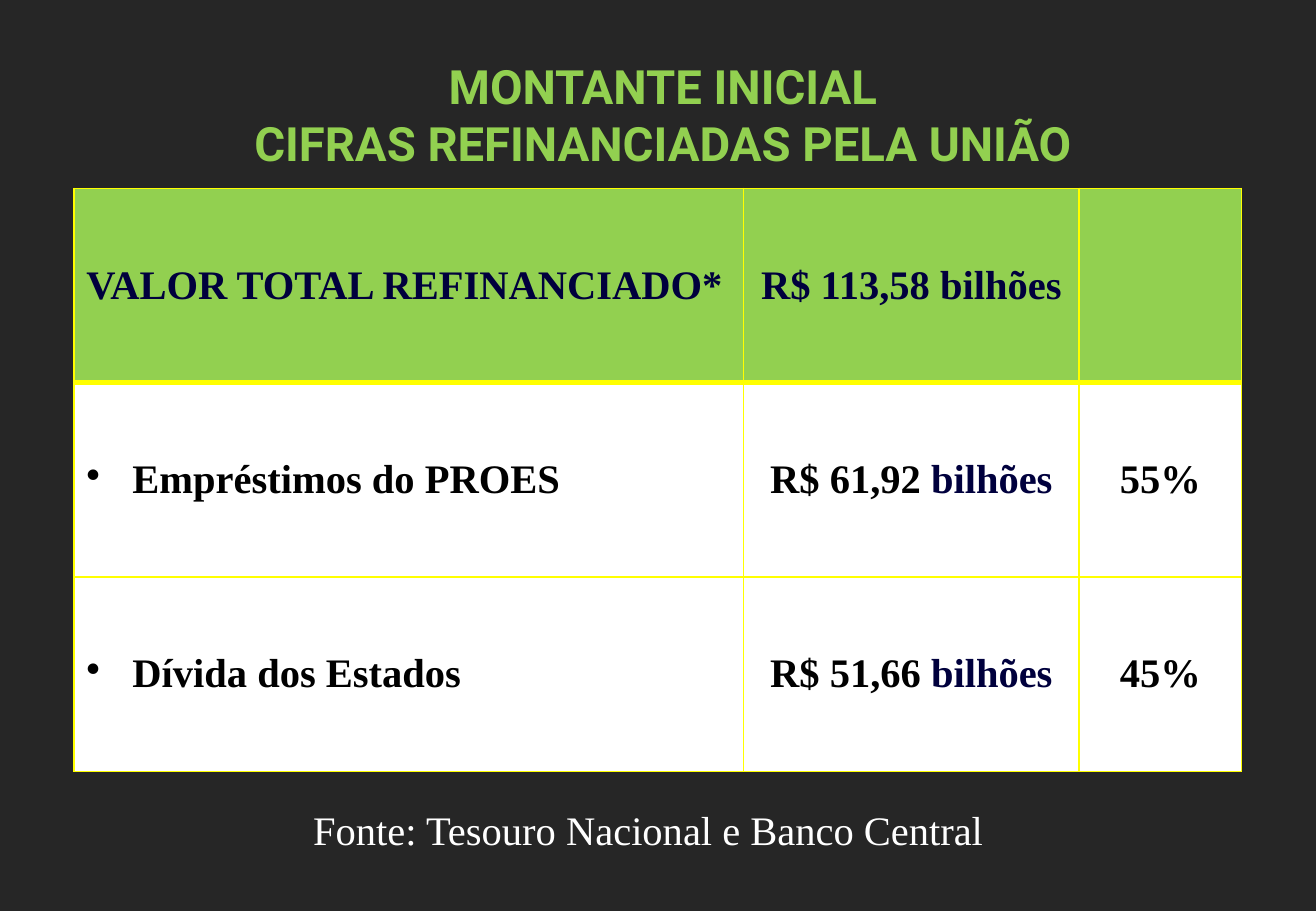
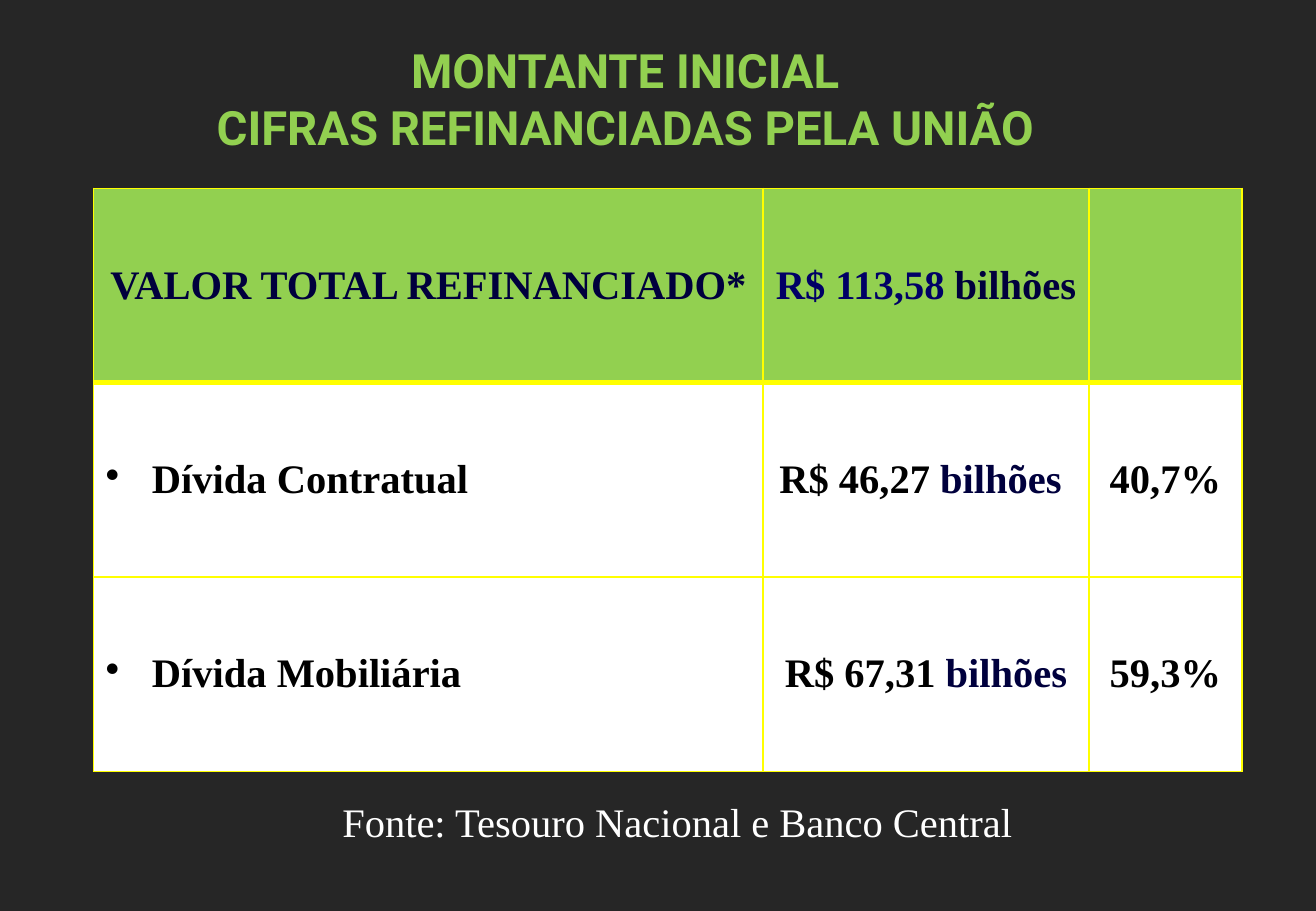
from dataclasses import dataclass

from lxml import etree
from pptx import Presentation
from pptx.dml.color import RGBColor
from pptx.enum.text import MSO_ANCHOR, MSO_AUTO_SIZE, PP_ALIGN
from pptx.oxml.ns import qn
from pptx.util import Inches, Pt

LEFT, CENTER = PP_ALIGN.LEFT, PP_ALIGN.CENTER
TOP, MIDDLE = MSO_ANCHOR.TOP, MSO_ANCHOR.MIDDLE
NO_AUTOSIZE = MSO_AUTO_SIZE.NONE
SLIDE_W, SLIDE_H = Inches(10.83), Inches(7.5)
TITLE_ONLY = 5
COLORS = {
    "background": "262626",
    "green": "92D050",
    "yellow": "FFFF00",
    "navy": "00003D",
    "blue": "000066",
    "black": "000000",
    "white": "FFFFFF",
}
HEAD_FONT, BODY_FONT = "Roboto", "Times New Roman"
TITLE = ("MONTANTE INICIAL", "CIFRAS REFINANCIADAS PELA UNIÃO")
SOURCE = "Fonte: Tesouro Nacional e Banco Central"
TABLE_TOP, TABLE_HEIGHT = 20.67, 64
THIN, THICK = 1, 3
PAD, TIGHT = 0.1, 0.01
INDENT = 0.38

Run = tuple[str, str]


@dataclass(frozen=True)
class Box:
    """Shares of the slide's width and height, in percent."""
    x: float
    y: float
    w: float
    h: float

    def lengths(self) -> tuple[int, int, int, int]:
        return across(self.x), down(self.y), across(self.w), down(self.h)


@dataclass(frozen=True)
class Cell:
    runs: tuple[Run, ...] = ()
    align: PP_ALIGN = CENTER
    bullet: bool = False
    left: float = PAD
    right: float = PAD


@dataclass(frozen=True)
class DebtSlide:
    title: Box
    source: Box
    table_left: float
    columns: tuple[float, ...]
    rows: tuple[tuple[Cell, ...], ...]


def across(share: float) -> int:
    return round(SLIDE_W * share / 100)


def down(share: float) -> int:
    return round(SLIDE_H * share / 100)


def rgb(name: str) -> RGBColor:
    return RGBColor.from_string(COLORS[name])


def write_text(tf, lines, *, font: str, size: float, bold: bool = False,
               align: PP_ALIGN = CENTER, bullet: bool = False) -> None:
    for i, runs in enumerate(lines):
        p = tf.paragraphs[0] if i == 0 else tf.add_paragraph()
        p.alignment = align
        if bullet:
            pPr = p._p.get_or_add_pPr()
            pPr.set("marL", str(Inches(INDENT)))
            pPr.set("indent", str(-Inches(INDENT)))
            etree.SubElement(pPr, qn("a:buChar")).set("char", "•")
        for text, color in runs:
            r = p.add_run()
            r.text = text
            r.font.name, r.font.size, r.font.bold = font, Pt(size), bold
            r.font.color.rgb = rgb(color)


def place_text(sp, box: Box, lines, **style) -> None:
    sp.left, sp.top, sp.width, sp.height = box.lengths()
    tf = sp.text_frame
    tf.word_wrap, tf.auto_size, tf.vertical_anchor = True, NO_AUTOSIZE, TOP
    write_text(tf, lines, **style)


def set_border(tcPr, side: str, width: float) -> None:
    ln = etree.SubElement(tcPr, qn(f"a:ln{side}"), w=str(Pt(width)))
    fill = etree.SubElement(ln, qn("a:solidFill"))
    etree.SubElement(fill, qn("a:srgbClr"), val=COLORS["yellow"])


def format_cell(target, cell: Cell, row: int) -> None:
    tcPr = target._tc.get_or_add_tcPr()
    widths = {"L": THIN, "R": THIN,
              "T": THICK if row == 1 else THIN,
              "B": THICK if row == 0 else THIN}
    for side, width in widths.items():
        set_border(tcPr, side, width)
    target.fill.solid()
    target.fill.fore_color.rgb = rgb("white" if row else "green")
    target.vertical_anchor = MIDDLE
    target.margin_left, target.margin_right = Inches(cell.left), Inches(cell.right)
    write_text(target.text_frame, [cell.runs], font=BODY_FONT, size=24,
               bold=True, align=cell.align, bullet=cell.bullet)


def add_debt_table(s, data: DebtSlide) -> None:
    box = Box(data.table_left, TABLE_TOP, sum(data.columns), TABLE_HEIGHT)
    table = s.shapes.add_table(len(data.rows), len(data.columns), *box.lengths()).table
    table.first_row = table.horz_banding = False
    for column, share in zip(table.columns, data.columns):
        column.width = across(share)
    for i, cells in enumerate(data.rows):
        table.rows[i].height = down(TABLE_HEIGHT / len(data.rows))
        for j, cell in enumerate(cells):
            format_cell(table.cell(i, j), cell, i)


def add_debt_slide(prs, data: DebtSlide) -> None:
    s = prs.slides.add_slide(prs.slide_layouts[TITLE_ONLY])
    place_text(s.shapes.title, data.title, [[(line, "green")] for line in TITLE],
               font=HEAD_FONT, size=28, bold=True)
    add_debt_table(s, data)
    place_text(s.shapes.add_textbox(0, 0, 0, 0), data.source, [[(SOURCE, "white")]],
               font=BODY_FONT, size=24)


def header(align: PP_ALIGN, amount_color: str) -> tuple[Cell, ...]:
    return (Cell((("VALOR TOTAL REFINANCIADO*", "navy"),), align),
            Cell((("R$ 113,58 ", amount_color), ("bilhões", "navy"))),
            Cell())


def debt(label: str, amount: str, share: str, left: float = PAD,
         right: float = PAD) -> tuple[Cell, ...]:
    return (Cell(((label, "black"),), LEFT, bullet=True),
            Cell(((f"R$ {amount} ", "black"), ("bilhões", "navy")), left=left, right=right),
            Cell(((share, "black"),), left=left, right=left))


SLIDES = (
    DebtSlide(
        title=Box(5.63, 5.6, 89.47, 13.87),
        source=Box(18.01, 87.73, 62.51, 6.67),
        table_left=5.63,
        columns=(50.88, 25.48, 12.37),
        rows=(header(LEFT, "navy"),
              debt("Empréstimos do PROES", "61,92", "55%"),
              debt("Dívida dos Estados", "51,66", "45%")),
    ),
    DebtSlide(
        title=Box(2.77, 3.87, 89.47, 13.87),
        source=Box(18.74, 86.8, 65.47, 12.13),
        table_left=7.11,
        columns=(50.88, 24.75, 11.63),
        rows=(header(CENTER, "blue"),
              debt("Dívida Contratual", "46,27", "40,7%", TIGHT, PAD),
              debt("Dívida Mobiliária", "67,31", "59,3%", TIGHT, TIGHT)),
    ),
)


def main() -> None:
    prs = Presentation()
    prs.slide_width, prs.slide_height = SLIDE_W, SLIDE_H
    fill = prs.slide_master.background.fill
    fill.solid()
    fill.fore_color.rgb = rgb("background")
    for data in SLIDES:
        add_debt_slide(prs, data)
    prs.save("out.pptx")


if __name__ == "__main__":
    main()
